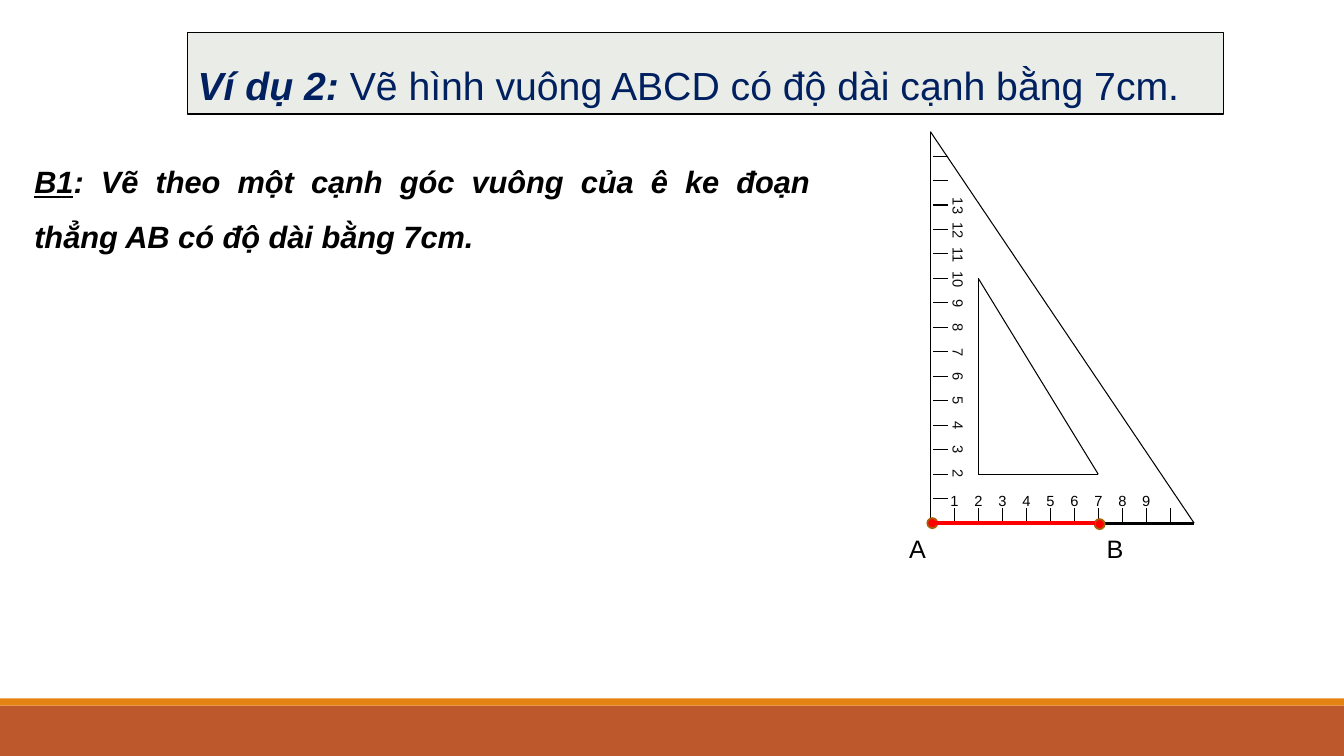
from dataclasses import dataclass

from lxml.etree import SubElement
from pptx import Presentation
from pptx.dml.color import RGBColor
from pptx.enum.shapes import MSO_CONNECTOR, MSO_SHAPE
from pptx.enum.text import MSO_ANCHOR, MSO_AUTO_SIZE, PP_ALIGN
from pptx.oxml.ns import qn
from pptx.util import Pt

BLACK = RGBColor(0x00, 0x00, 0x00)
RED = RGBColor(0xFF, 0x00, 0x00)
NAVY = RGBColor(0x00, 0x20, 0x60)
NEAR_BLACK = RGBColor(0x0D, 0x0D, 0x0D)
PALE_GREEN = RGBColor(0xEA, 0xEC, 0xE7)
RUST = RGBColor(0xBD, 0x58, 0x2C)
ORANGE = RGBColor(0xE4, 0x83, 0x12)
BROWN = RGBColor(0xA9, 0x61, 0x0D)

SLIDE_WIDTH, SLIDE_HEIGHT = 960, 540
CORNER_X, CORNER_Y = 664.56, 373.68
STEP_X, STEP_Y = 17.13, 17.48


@dataclass(frozen=True)
class Box:
    left: float
    top: float
    width: float
    height: float

    def lengths(self) -> tuple:
        return Pt(self.left), Pt(self.top), Pt(self.width), Pt(self.height)


@dataclass(frozen=True)
class Scale:
    """Numbers along one leg of the set square, centred on tab stops."""
    box: Box
    numbers: range
    first_centre: float
    step: float
    color: RGBColor
    rotation: int = 0


BARS = [(Box(0, 504, SLIDE_WIDTH, 36), RUST), (Box(0, 498.96, SLIDE_WIDTH, 5.04), ORANGE)]
VERTEX_LABELS = [("A", Box(642.24, 377.28, 28.8, 29)), ("B", Box(783.36, 377.28, 28.8, 29))]
SCALES = [
    Scale(Box(671.76, 347.76, 188.64, 20.88), range(1, 10), 2.92, STEP_X, BLACK),
    Scale(Box(547.2, 261.36, 274.32, 20.16), range(13, 1, -1), 5.84, 17.4, NEAR_BLACK, 90),
]
END_POINTS = [Box(662.4, 370.08, 7.2, 7.2), Box(781.92, 370.8, 7.2, 7.2)]

# Corners counted in ruler units from the right angle, then the width of the base line
TRIANGLES = [((0, 0), (11, 0), (0, 16), 2.25), ((2, 2), (7, 2), (2, 10), 0.75)]


def set_values(target, values: dict) -> None:
    for name, value in values.items():
        setattr(target, name, value)


def on_ruler(units: tuple) -> tuple:
    """Turn ruler units into points on the slide."""
    across, up = units
    return CORNER_X + across * STEP_X, CORNER_Y - up * STEP_Y


def add_run(paragraph, text: str, size: float, color: RGBColor, **values) -> None:
    run = paragraph.add_run()
    run.text = text
    set_values(run.font, {"name": "Arial", "size": Pt(size), **values})
    run.font.color.rgb = color


def add_line(shapes, start: tuple, end: tuple, color: RGBColor, width: float) -> None:
    line = shapes.add_connector(MSO_CONNECTOR.STRAIGHT, *map(Pt, (*start, *end)))
    line.line.color.rgb = color
    line.line.width = Pt(width)
    SubElement(line._element.spPr, qn("a:effectLst"))


def add_preset(shapes, kind: MSO_SHAPE, box: Box, fill: RGBColor):
    shape = shapes.add_shape(kind, *box.lengths())
    shape.shadow.inherit = False
    shape.fill.solid()
    shape.fill.fore_color.rgb = fill
    shape.line.fill.background()
    return shape


def add_textbox(shapes, box: Box):
    label = shapes.add_textbox(*box.lengths())
    set_values(label.text_frame, {"word_wrap": True, "auto_size": MSO_AUTO_SIZE.SHAPE_TO_FIT_TEXT})
    return label


def prepare_placeholder(placeholder, box: Box, spacing: dict):
    """Place it and return its paragraph, justified and without a bullet."""
    left, top, width, height = box.lengths()
    set_values(placeholder, {"left": left, "top": top, "width": width, "height": height})
    set_values(placeholder.text_frame, {
        "word_wrap": True,
        "auto_size": MSO_AUTO_SIZE.NONE,
        "vertical_anchor": MSO_ANCHOR.TOP,
    })
    paragraph = placeholder.text_frame.paragraphs[0]
    set_values(paragraph, {"alignment": PP_ALIGN.JUSTIFY, "line_spacing": 1.5, **spacing})
    properties = paragraph._p.get_or_add_pPr()
    properties.set("marL", "0")
    properties.set("indent", "0")
    SubElement(properties, qn("a:buNone"))
    return paragraph


def add_scale(shapes, scale: Scale) -> None:
    label = add_textbox(shapes, scale.box)
    label.rotation = scale.rotation
    paragraph = label.text_frame.paragraphs[0]
    tabs = SubElement(paragraph._p.get_or_add_pPr(), qn("a:tabLst"))
    for position in range(1, len(scale.numbers)):
        centre = Pt(scale.first_centre + position * scale.step)
        SubElement(tabs, qn("a:tab"), pos=str(int(centre)), algn="ctr")
    add_run(paragraph, "\t".join(map(str, scale.numbers)), 10.5, scale.color)


def add_set_square(slide) -> None:
    shapes = slide.shapes.add_group_shape().shapes
    for corner, right, top, base_width in TRIANGLES:
        for start, end, width in ((top, corner, 0.75), (corner, right, base_width), (top, right, 0.75)):
            add_line(shapes, on_ruler(start), on_ruler(end), BLACK, width)
    for unit in range(1, 11):
        x, y = on_ruler((unit, 0))
        add_line(shapes, (x, y), (x, y - 10.8), BLACK, 0.75)
    for unit in range(1, 16):
        x, y = on_ruler((0, unit))
        add_line(shapes, (x + 2.16, y), (x + 12.24, y), BLACK, 0.75)
    for scale in SCALES:
        add_scale(shapes, scale)


def add_segment(slide) -> None:
    """Draw segment AB with its end points."""
    for box in END_POINTS:
        dot = add_preset(slide.shapes, MSO_SHAPE.OVAL, box, RED)
        dot.line.color.rgb = BROWN
        dot.line.width = Pt(1.25)
    add_line(slide.shapes, (666, CORNER_Y), (781.92, CORNER_Y), RED, 3)


def add_example_title(slide) -> None:
    title = slide.shapes.title
    paragraph = prepare_placeholder(title, Box(133.92, 23.04, 740.16, 58.32), {"space_before": Pt(0)})
    title.fill.solid()
    title.fill.fore_color.rgb = PALE_GREEN
    title.line.color.rgb = BLACK
    title.line.width = Pt(1)
    add_run(paragraph, "Ví dụ 2: ", 28, NAVY, bold=True, italic=True)
    add_run(paragraph, "Vẽ hình vuông ABCD có độ dài cạnh bằng 7cm.", 28, NAVY, bold=False, italic=False)


def add_drawing_step(slide) -> None:
    paragraph = prepare_placeholder(slide.placeholders[1], Box(17.28, 99.36, 568.8, 82.08),
                                    {"space_before": Pt(6), "space_after": Pt(6)})
    emphasis = {"bold": True, "italic": True}
    add_run(paragraph, "B1", 22, BLACK, underline=True, **emphasis)
    add_run(paragraph, ": Vẽ theo một cạnh góc vuông của ê ke đoạn thẳng AB có độ dài bằng 7cm.",
            22, BLACK, **emphasis)


def main() -> None:
    presentation = Presentation()
    set_values(presentation, {"slide_width": Pt(SLIDE_WIDTH), "slide_height": Pt(SLIDE_HEIGHT)})
    slide = presentation.slides.add_slide(presentation.slide_layouts[1])
    for box, color in BARS:
        add_preset(slide.shapes, MSO_SHAPE.RECTANGLE, box, color)
    for letter, box in VERTEX_LABELS:
        label = add_textbox(slide.shapes, box)
        add_run(label.text_frame.paragraphs[0], letter, 18, BLACK)
    add_set_square(slide)
    add_example_title(slide)
    add_segment(slide)
    add_drawing_step(slide)
    presentation.save("out.pptx")


if __name__ == "__main__":
    main()
